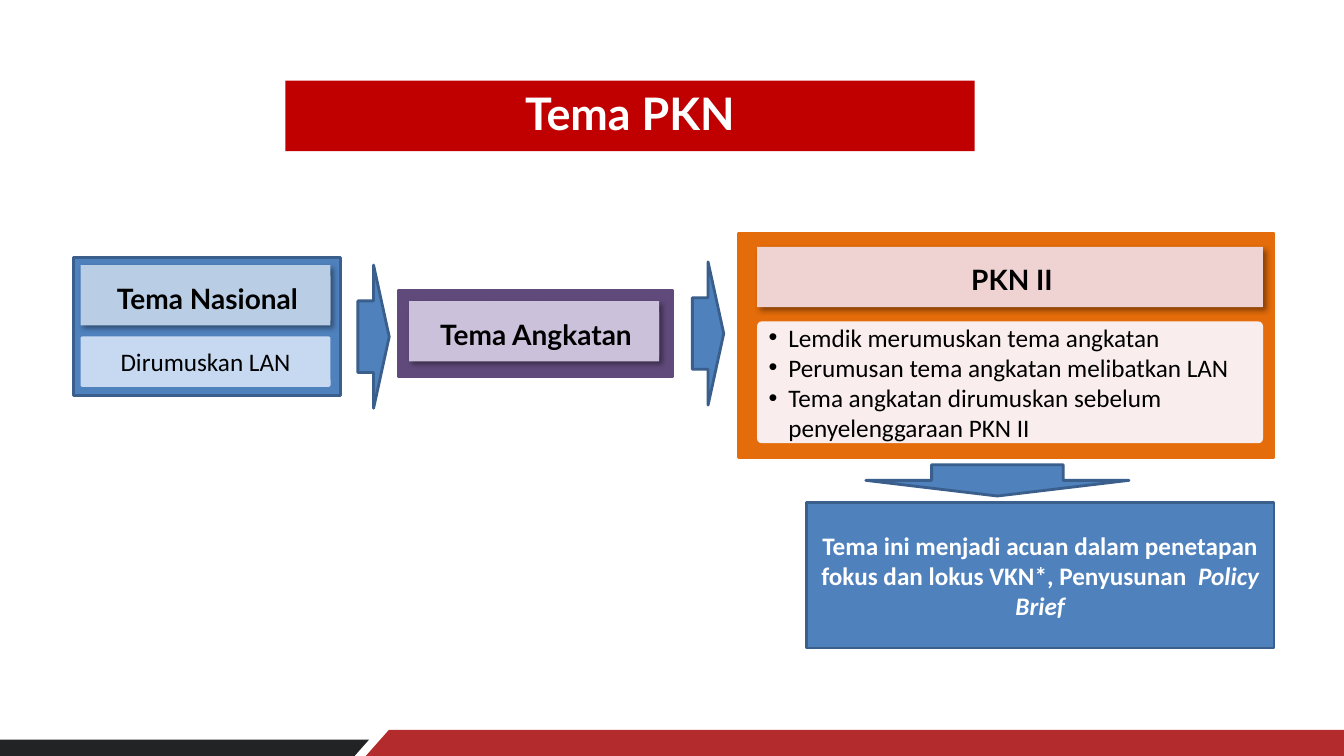
from dataclasses import dataclass

from pptx import Presentation
from pptx.dml.color import RGBColor
from pptx.enum.shapes import MSO_SHAPE
from pptx.enum.text import MSO_ANCHOR, MSO_AUTO_SIZE, PP_ALIGN
from pptx.oxml import parse_xml
from pptx.oxml.ns import nsdecls, qn
from pptx.util import Cm, Pt


@dataclass(frozen=True)
class Theme:
    heading_font: str = "Lato"
    body_font: str = "Calibri"
    title_size: int = 32
    label_size: int = 20
    body_size: int = 18
    outline_width: int = 2
    black: str = "000000"
    white: str = "FFFFFF"
    title_red: str = "C00000"
    footer_red: str = "B42B2D"
    footer_dark: str = "222324"
    blue: str = "4F81BD"
    blue_edge: str = "3A5F8C"
    blue_card: str = "B9CDE5"
    blue_note: str = "C6D9F1"
    purple: str = "604A7B"
    purple_card: str = "CCC1DA"
    orange: str = "E46C0A"
    pink_card: str = "EFD3D2"
    pink_note: str = "F9EEED"


THEME = Theme()


def color(code):
    return RGBColor.from_string(code)


def paint(shape, fill, line=None):
    shape.fill.solid()
    shape.fill.fore_color.rgb = color(fill)
    if line:
        shape.line.color.rgb = color(line)
        shape.line.width = Pt(THEME.outline_width)
    else:
        shape.line.fill.background()


def add_box(shapes, place, fill, line=None, kind=MSO_SHAPE.RECTANGLE, corner=None):
    box = shapes.add_shape(kind, *map(Cm, place))
    box.shadow.inherit = False
    paint(box, fill, line)
    if corner is not None:
        box.adjustments[0] = corner
    return box


def add_bullet(para):
    properties = para._p.get_or_add_pPr()
    properties.set("marL", str(Cm(0.5)))
    properties.set("indent", str(-Cm(0.5)))
    properties.append(parse_xml(f'<a:buFont {nsdecls("a")} typeface="Arial"/>'))
    properties.append(parse_xml(f'<a:buChar {nsdecls("a")} char="•"/>'))


def write(shape, *lines, font=THEME.body_font, size=THEME.body_size, ink=THEME.black,
          bold=False, align=PP_ALIGN.CENTER, anchor=MSO_ANCHOR.MIDDLE,
          fit=MSO_AUTO_SIZE.NONE, bullets=False, spacing=1.0):
    frame = shape.text_frame
    frame.word_wrap = True
    frame.auto_size = fit
    frame.vertical_anchor = anchor
    for index, line in enumerate(lines):
        para = frame.add_paragraph() if index else frame.paragraphs[0]
        if bullets:
            add_bullet(para)
        para.alignment = align
        para.space_before = Pt(0)
        para.line_spacing = spacing
        for text, italic in [(line, False)] if isinstance(line, str) else line:
            span = para.add_run()
            span.text = text
            span.font.name = font
            span.font.size = Pt(size)
            span.font.color.rgb = color(ink)
            span.font.bold = bold
            span.font.italic = italic


def place_rounded(placeholder, place, fill, corner):
    placeholder.left, placeholder.top, placeholder.width, placeholder.height = map(Cm, place)
    placeholder.element.spPr.append(parse_xml(
        f'<a:prstGeom {nsdecls("a")} prst="roundRect"><a:avLst>'
        f'<a:gd name="adj" fmla="val {round(corner * 100000)}"/>'
        '</a:avLst></a:prstGeom>'))
    paint(placeholder, fill)
    placeholder.element.getparent().append(placeholder.element)


def cast_shadow(shape):
    effects = shape.element.spPr.find(qn("a:effectLst"))
    effects.append(parse_xml(
        f'<a:outerShdw {nsdecls("a")} blurRad="{Pt(4)}" dist="{Pt(3)}" dir="2700000" '
        'algn="tl" rotWithShape="0"><a:srgbClr val="000000"><a:alpha val="40000"/>'
        '</a:srgbClr></a:outerShdw>'))


def add_card(page, left, top, width, fill, text):
    group = page.shapes.add_group_shape()
    cast_shadow(add_box(group.shapes, (left, top, width, 1.52), fill))
    label = add_box(group.shapes, (left + 0.1, top + 0.28, width - 0.1, 1.12), fill)
    write(label, text, font=THEME.heading_font, size=THEME.label_size, bold=True,
          anchor=MSO_ANCHOR.TOP, fit=MSO_AUTO_SIZE.SHAPE_TO_FIT_TEXT)


def add_arrow(page, left, top, length, rotation=0):
    arrow = add_box(page.shapes, (left, top, 0.79, length), THEME.blue, THEME.blue_edge,
                    MSO_SHAPE.RIGHT_ARROW)
    arrow.rotation = rotation


def main():
    deck = Presentation()
    deck.slide_width, deck.slide_height = Cm(33.87), Cm(19.05)
    page = deck.slides.add_slide(deck.slide_layouts[1])
    title, details = page.placeholders

    for place, fill in (((8.36, 18.39, 26.77, 1.63), THEME.footer_red),
                        ((-1.8, 18.64, 11.1, 1.63), THEME.footer_dark)):
        add_box(page.shapes, place, fill, kind=MSO_SHAPE.PARALLELOGRAM, corner=0.886)

    for place, fill, line in (
            ((10.03, 7.32, 6.93, 2.16), THEME.purple, THEME.purple),
            ((18.62, 5.87, 13.49, 5.66), THEME.orange, THEME.orange),
            ((1.85, 6.48, 6.73, 3.48), THEME.blue, THEME.blue_edge)):
        add_box(page.shapes, place, fill, line)

    place_rounded(title, (7.19, 2.03, 17.37, 1.78), THEME.title_red, 0.367)
    write(title, "Tema PKN", font=THEME.heading_font, size=THEME.title_size,
          ink=THEME.white, bold=True, spacing=0.9)

    add_card(page, 2.03, 6.68, 6.3, THEME.blue_card, "Tema Nasional")
    add_card(page, 10.31, 7.59, 6.3, THEME.purple_card, "Tema Angkatan")
    add_card(page, 19.08, 6.22, 12.75, THEME.pink_card, "PKN II")

    author = add_box(page.shapes, (2.03, 8.48, 6.3, 1.27), THEME.blue_note,
                     kind=MSO_SHAPE.ROUNDED_RECTANGLE, corner=0.038)
    write(author, "Dirumuskan LAN")

    place_rounded(details, (19.08, 8.1, 12.75, 3.07), THEME.pink_note, 0.038)
    write(details,
          "Lemdik merumuskan tema angkatan",
          "Perumusan tema angkatan melibatkan LAN",
          "Tema angkatan dirumuskan sebelum penyelenggaraan PKN II",
          align=PP_ALIGN.LEFT, bullets=True)

    add_arrow(page, 9.02, 6.68, 3.61)
    add_arrow(page, 17.45, 6.6, 3.61)

    outcome = add_box(page.shapes, (20.32, 12.67, 11.79, 3.66), THEME.blue, THEME.blue_edge)
    write(outcome,
          [("Tema ini menjadi acuan dalam penetapan fokus dan lokus VKN*, Penyusunan  ", False),
           ("Policy Brief", True)],
          ink=THEME.white, bold=True)
    add_arrow(page, 24.74, 8.79, 6.63, rotation=90)

    deck.save("out.pptx")


if __name__ == "__main__":
    main()
